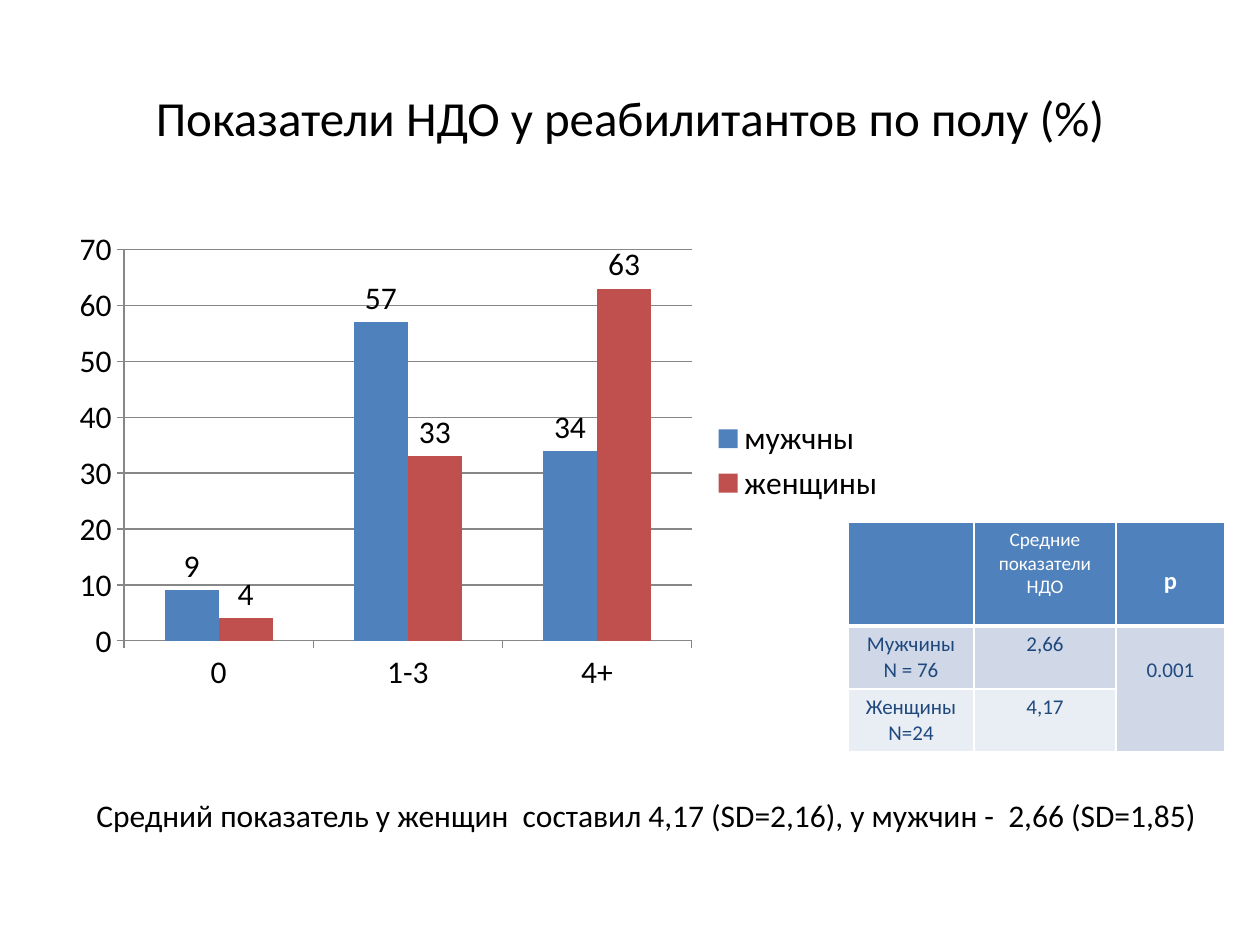
from dataclasses import dataclass
from typing import Any

from lxml import etree
from pptx import Presentation
from pptx.chart.data import CategoryChartData
from pptx.dml.color import RGBColor
from pptx.enum.chart import XL_CHART_TYPE, XL_LABEL_POSITION, XL_LEGEND_POSITION, XL_TICK_MARK
from pptx.enum.text import MSO_ANCHOR, PP_ALIGN
from pptx.oxml.ns import qn
from pptx.util import Emu, Pt

COLUMN = XL_CHART_TYPE.COLUMN_CLUSTERED
ABOVE = XL_LABEL_POSITION.OUTSIDE_END
RIGHT = XL_LEGEND_POSITION.RIGHT
OUTSIDE = XL_TICK_MARK.OUTSIDE
TOP, MIDDLE = MSO_ANCHOR.TOP, MSO_ANCHOR.MIDDLE
LEFT, CENTER = PP_ALIGN.LEFT, PP_ALIGN.CENTER

BLACK = RGBColor(0x00, 0x00, 0x00)
WHITE = RGBColor(0xFF, 0xFF, 0xFF)
GREY = RGBColor(0x87, 0x87, 0x87)
BLUE = RGBColor(0x4F, 0x81, 0xBD)
RED = RGBColor(0xC0, 0x50, 0x4D)
NAVY = RGBColor(0x1F, 0x49, 0x7D)
MIST = RGBColor(0xD0, 0xD8, 0xE8)
PALE = RGBColor(0xE9, 0xED, 0xF4)

FACE = "Calibri"
SCALE = 914400 / 126
WIDE, HIGH = 1260, 945


@dataclass(frozen=True)
class Label:
    box: tuple[int, int, int, int]
    text: str
    size: int
    align: Any
    anchor: Any


@dataclass(frozen=True)
class Series:
    name: str
    values: tuple[int, ...]
    color: RGBColor


@dataclass(frozen=True)
class Entry:
    row: int
    col: int
    text: str
    fill: RGBColor
    color: RGBColor = NAVY
    size: int = 12
    bold: bool = False
    inset: int = 6


LABELS = (
    Label((63, 38, 1134, 158), "Показатели НДО у реабилитантов по полу (%)", 28, CENTER, MIDDLE),
    Label((84, 790, 1160, 50),
          "Средний показатель у женщин  составил 4,17 (SD=2,16), у мужчин -  2,66 (SD=1,85)",
          18, LEFT, TOP),
)
GROUPS = ("0", "1-3", "4+")
SERIES = (
    Series("мужчны", (9, 57, 34), BLUE),
    Series("женщины", (4, 33, 63), RED),
)
ENTRIES = (
    Entry(0, 0, "", BLUE, WHITE),
    Entry(0, 1, "Средние\nпоказатели\nНДО", BLUE, WHITE, 11),
    Entry(0, 2, "p", BLUE, WHITE, 14, True, 44),
    Entry(1, 0, "Мужчины\nN = 76", MIST),
    Entry(1, 1, "2,66", MIST),
    Entry(1, 2, "0.001", MIST, inset=32),
    Entry(2, 0, "Женщины\nN=24", PALE),
    Entry(2, 1, "4,17", PALE),
)
COLS = (126, 142, 109)
ROWS = (104, 63, 63)


def px(value: int) -> Emu:
    return Emu(round(value * SCALE))


def place(box: tuple[int, ...]) -> list[Emu]:
    return [px(side) for side in box]


def apply(target: Any, values: dict[str, Any]) -> None:
    for name, value in values.items():
        setattr(target, name, value)


def style(font: Any, size: int, color: RGBColor, bold: bool = False) -> None:
    apply(font, {"name": FACE, "size": Pt(size), "bold": bold})
    font.color.rgb = color


def write(frame: Any, text: str, size: int, color: RGBColor, align: Any, bold: bool = False) -> None:
    frame.text = text
    for para in frame.paragraphs:
        para.alignment = align
        style(para.font, size, color, bold)
        for run in para.runs:
            style(run.font, size, color, bold)


def add_label(slide: Any, label: Label) -> None:
    frame = slide.shapes.add_textbox(*place(label.box)).text_frame
    apply(frame, {"word_wrap": True, "vertical_anchor": label.anchor})
    write(frame, label.text, label.size, BLACK, label.align)


def add_bars(slide: Any) -> None:
    data = CategoryChartData()
    data.categories = GROUPS
    for item in SERIES:
        data.add_series(item.name, item.values)
    chart = slide.shapes.add_chart(COLUMN, *place((63, 221, 835, 480)), data).chart
    apply(chart, {"has_title": False, "has_legend": True})
    style(chart.font, 18, BLACK)
    apply(chart.legend, {"position": RIGHT, "include_in_layout": False})
    for axis in (chart.category_axis, chart.value_axis):
        axis.major_tick_mark = OUTSIDE
        axis.format.line.color.rgb = GREY
    scale = chart.value_axis
    apply(scale, {"minimum_scale": 0, "maximum_scale": 70, "major_unit": 10,
                  "has_major_gridlines": True})
    scale.major_gridlines.format.line.color.rgb = GREY
    plot = chart.plots[0]
    apply(plot, {"gap_width": 150, "overlap": 0, "vary_by_categories": False})
    for bars, item in zip(plot.series, SERIES):
        bars.format.fill.solid()
        bars.format.fill.fore_color.rgb = item.color
        apply(bars.data_labels, {"show_value": True, "position": ABOVE})
        style(bars.data_labels.font, 18, BLACK)


def edge(cell: Any, row: int) -> None:
    widths = {"L": 1, "R": 1, "T": 3 if row == 1 else 1, "B": 3 if row == 0 else 1}
    props = cell._tc.get_or_add_tcPr()
    for side, width in widths.items():
        line = etree.SubElement(props, qn(f"a:ln{side}"), w=str(Pt(width)))
        fill = etree.SubElement(line, qn("a:solidFill"))
        etree.SubElement(fill, qn("a:srgbClr"), val=str(WHITE))


def add_grid(slide: Any) -> None:
    box = place((848, 522, sum(COLS), sum(ROWS)))
    table = slide.shapes.add_table(len(ROWS), len(COLS), *box).table
    for col, width in zip(table.columns, COLS):
        col.width = px(width)
    for row, height in zip(table.rows, ROWS):
        row.height = px(height)
    table.cell(1, 2).merge(table.cell(2, 2))
    for item in ENTRIES:
        cell = table.cell(item.row, item.col)
        edge(cell, item.row)
        cell.fill.solid()
        cell.fill.fore_color.rgb = item.fill
        apply(cell, {"vertical_anchor": TOP, "margin_top": px(item.inset)})
        write(cell.text_frame, item.text, item.size, item.color, CENTER, item.bold)


def main() -> None:
    deck = Presentation()
    apply(deck, {"slide_width": px(WIDE), "slide_height": px(HIGH)})
    slide = deck.slides.add_slide(deck.slide_layouts[6])
    add_bars(slide)
    for label in LABELS:
        add_label(slide, label)
    add_grid(slide)
    deck.save("out.pptx")


if __name__ == "__main__":
    main()
